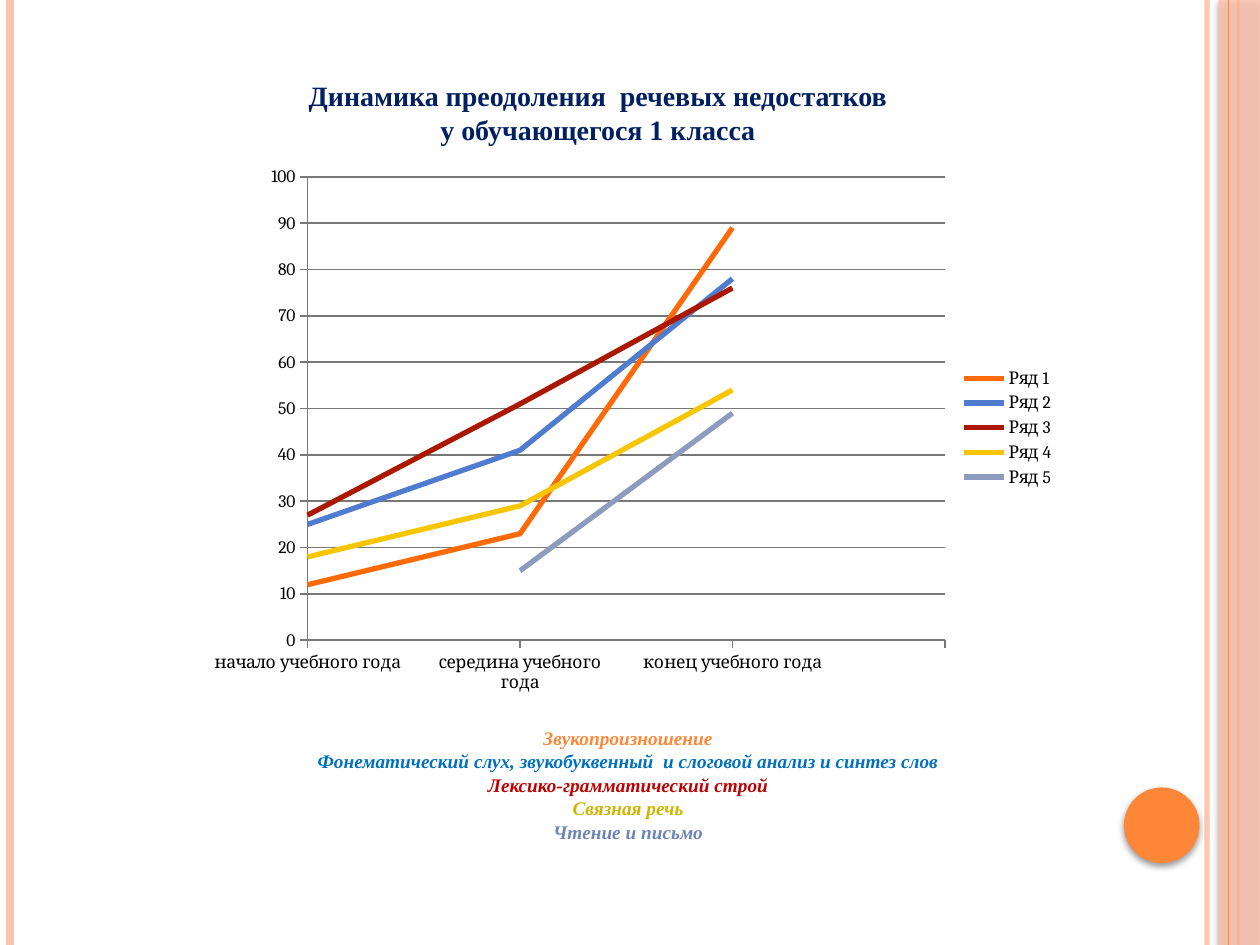
from dataclasses import dataclass

from lxml.etree import SubElement
from pptx import Presentation
from pptx.chart.data import CategoryChartData
from pptx.dml.color import RGBColor
from pptx.enum.chart import XL_CHART_TYPE, XL_LEGEND_POSITION, XL_TICK_MARK
from pptx.enum.shapes import MSO_CONNECTOR, MSO_SHAPE
from pptx.enum.text import MSO_ANCHOR, PP_ALIGN
from pptx.oxml import parse_xml
from pptx.oxml.ns import nsdecls, qn
from pptx.util import Inches, Pt

WIDTH, HEIGHT = Inches(10), Inches(7.5)
COLUMN, ROW = WIDTH / 100, HEIGHT / 75

PINK = RGBColor(0xFE, 0xC3, 0xAE)
ORANGE = RGBColor(0xFE, 0x86, 0x37)
NAVY = RGBColor(0x00, 0x20, 0x60)
BLACK = RGBColor(0, 0, 0)
GREY = RGBColor(0x77, 0x77, 0x77)


@dataclass(frozen=True)
class Area:
    """A rectangle in columns and rows of the slide grid."""
    left: float
    top: float
    width: float
    height: float

    def lengths(self) -> tuple:
        return (round(self.left * COLUMN), round(self.top * ROW),
                round(self.width * COLUMN), round(self.height * ROW))


@dataclass(frozen=True)
class Stripe:
    column: float
    color: RGBColor
    weight: float
    opacity: int = 100


@dataclass(frozen=True)
class Ornament:
    kind: MSO_SHAPE
    area: Area
    color: RGBColor
    opacity: int = 100


@dataclass(frozen=True)
class TextLine:
    text: str
    color: RGBColor


@dataclass(frozen=True)
class Series:
    name: str
    values: tuple
    color: RGBColor


STRIPES_BELOW = (Stripe(95.8, PINK, 3, 93), Stripe(0.8, PINK, 4.5),
                 Stripe(98.3, ORANGE, 1.5))
BAND = Ornament(MSO_SHAPE.RECTANGLE, Area(96.7, 0, 3.3, 75), PINK, 87)
STRIPE_ABOVE = Stripe(97.5, ORANGE, 0.75)
CIRCLE = Ornament(MSO_SHAPE.OVAL, Area(89.2, 62.5, 6, 6), ORANGE)

TITLE_AREA = Area(22.9, 5.9, 49.1, 6)
TITLE = (TextLine("Динамика преодоления  речевых недостатков", NAVY),
         TextLine("у обучающегося 1 класса", NAVY))
SKILLS_AREA = Area(14.6, 57, 70.5, 10.5)
SKILLS = (
    TextLine("Звукопроизношение", ORANGE),
    TextLine("Фонематический слух, звукобуквенный  и слоговой анализ и синтез слов",
             RGBColor(0x00, 0x70, 0xC0)),
    TextLine("Лексико-грамматический строй", RGBColor(0xC0, 0x00, 0x00)),
    TextLine("Связная речь", RGBColor(0xCE, 0xB5, 0x00)),
    TextLine("Чтение и письмо", RGBColor(0x6E, 0x84, 0xB4)),
)

CHART_AREA = Area(15.4, 12.3, 69.3, 43.3)
PLOT_SHARES = {"x": 0.13, "y": 0.04, "w": 0.73, "h": 0.85}
CATEGORIES = ("начало учебного года", "середина учебного года",
              "конец учебного года", "")
SERIES = (
    Series("Ряд 1", (12, 23, 89, None), RGBColor(0xFF, 0x6A, 0x09)),
    Series("Ряд 2", (25, 41, 78, None), RGBColor(0x4F, 0x7C, 0xCE)),
    Series("Ряд 3", (27, 51, 76, None), RGBColor(0xAB, 0x18, 0x00)),
    Series("Ряд 4", (18, 29, 54, None), RGBColor(0xF7, 0xC6, 0x00)),
    Series("Ряд 5", (None, 15, 49, None), RGBColor(0x8D, 0x9C, 0xBE)),
)


def set_font(font, color: RGBColor, **formats) -> None:
    for name, value in formats.items():
        setattr(font, name, value)
    font.color.rgb = color


def set_line(line, color: RGBColor, weight: float) -> None:
    line.color.rgb = color
    line.width = Pt(weight)


def set_opacity(properties, percent: int) -> None:
    """Make the first solid colour in the shape properties translucent."""
    if percent < 100:
        color = properties.find(".//" + qn("a:srgbClr"))
        SubElement(color, qn("a:alpha"), val=str(percent * 1000))


def draw_stripe(slide, stripe: Stripe) -> None:
    x = round(stripe.column * COLUMN)
    line = slide.shapes.add_connector(MSO_CONNECTOR.STRAIGHT, x, 0, x, HEIGHT)
    set_line(line.line, stripe.color, stripe.weight)
    properties = line._element.spPr
    set_opacity(properties, stripe.opacity)
    SubElement(properties, qn("a:effectLst"))


def draw_ornament(slide, ornament: Ornament) -> None:
    shape = slide.shapes.add_shape(ornament.kind, *ornament.area.lengths())
    shape.fill.solid()
    shape.fill.fore_color.rgb = ornament.color
    shape.line.fill.background()
    properties = shape._element.spPr
    set_opacity(properties, ornament.opacity)
    properties.append(parse_xml(
        f'<a:effectLst {nsdecls("a")}><a:outerShdw blurRad="{Pt(4)}" dist="{Pt(2)}" '
        'dir="5400000" rotWithShape="0"><a:srgbClr val="000000"><a:alpha val="40000"/>'
        '</a:srgbClr></a:outerShdw></a:effectLst>'))


def fill_placeholder(box, area: Area, lines: tuple, spacing: float, **formats) -> None:
    box.left, box.top, box.width, box.height = area.lengths()
    frame = box.text_frame
    frame.word_wrap = True
    frame.vertical_anchor = MSO_ANCHOR.MIDDLE
    for side in ("left", "right", "top", "bottom"):
        setattr(frame, f"margin_{side}", 0)
    for index, line in enumerate(lines):
        para = frame.add_paragraph() if index else frame.paragraphs[0]
        properties = para._p.get_or_add_pPr()
        properties.set("marL", "0")
        properties.set("indent", "0")
        SubElement(properties, qn("a:buNone"))
        para.alignment = PP_ALIGN.CENTER
        para.line_spacing = Pt(spacing)
        para.space_before = para.space_after = Pt(0)
        span = para.add_run()
        span.text = line.text
        set_font(span.font, line.color, name="Times New Roman", **formats)


def place_plot(chart) -> None:
    """Fix the inner plot area as shares of the chart."""
    area = chart._chartSpace.chart.plotArea
    for old in area.findall(qn("c:layout")):
        area.remove(old)
    shares = "".join(f'<c:{name} val="{value}"/>' for name, value in PLOT_SHARES.items())
    area.insert(0, parse_xml(
        f'<c:layout {nsdecls("c")}><c:manualLayout><c:layoutTarget val="inner"/>'
        f'<c:xMode val="edge"/><c:yMode val="edge"/>{shares}</c:manualLayout></c:layout>'))


def draw_chart(slide) -> None:
    data = CategoryChartData()
    data.categories = CATEGORIES
    for series in SERIES:
        data.add_series(series.name, series.values)
    chart = slide.shapes.add_chart(XL_CHART_TYPE.LINE, *CHART_AREA.lengths(), data).chart
    chart.has_title = False
    chart.has_legend = True
    chart.legend.position = XL_LEGEND_POSITION.RIGHT
    chart.legend.include_in_layout = False
    set_font(chart.font, BLACK, name="Arial", size=Pt(10))
    set_font(chart.legend.font, BLACK, name="Cambria", size=Pt(10))
    for axis in (chart.category_axis, chart.value_axis):
        axis.major_tick_mark = XL_TICK_MARK.OUTSIDE
        axis.minor_tick_mark = XL_TICK_MARK.NONE
        set_line(axis.format.line, GREY, 1)
        set_font(axis.tick_labels.font, BLACK, name="Cambria", size=Pt(10))
    values = chart.value_axis
    values.minimum_scale, values.maximum_scale, values.major_unit = 0, 100, 10
    values.has_major_gridlines = True
    set_line(values.major_gridlines.format.line, GREY, 1)
    values._element.find(qn("c:majorUnit")).addprevious(
        parse_xml(f'<c:crossBetween {nsdecls("c")} val="midCat"/>'))
    chart.plots[0].vary_by_categories = False
    for drawn, series in zip(chart.plots[0].series, SERIES):
        drawn.smooth = False
        set_line(drawn.format.line, series.color, 3)
    place_plot(chart)


def main() -> None:
    deck = Presentation()
    deck.slide_width, deck.slide_height = WIDTH, HEIGHT
    page = deck.slides.add_slide(deck.slide_layouts[1])
    for stripe in STRIPES_BELOW:
        draw_stripe(page, stripe)
    draw_ornament(page, BAND)
    draw_stripe(page, STRIPE_ABOVE)
    draw_ornament(page, CIRCLE)
    draw_chart(page)
    fill_placeholder(page.shapes.title, TITLE_AREA, TITLE, 19.5, size=Pt(16), bold=True)
    fill_placeholder(page.placeholders[1], SKILLS_AREA, SKILLS, 13.5,
                     size=Pt(11), bold=True, italic=True)
    deck.save("out.pptx")


if __name__ == "__main__":
    main()
